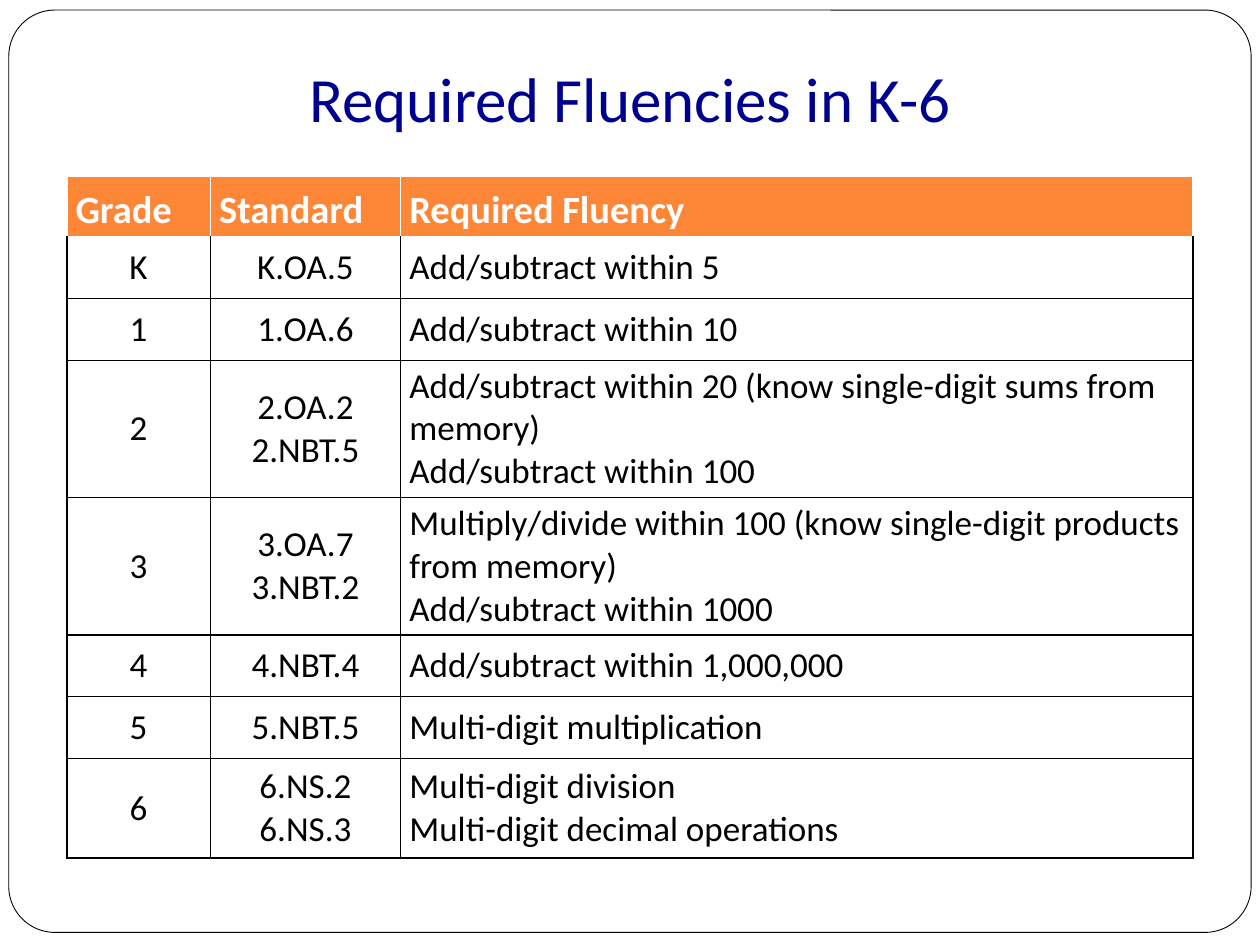
import pptx
import pptx.util
from lxml import etree
from pptx.dml.color import RGBColor
from pptx.enum.shapes import MSO_SHAPE
from pptx.enum.text import MSO_ANCHOR, PP_ALIGN
from pptx.oxml.ns import qn
from pptx.util import Inches, Pt

TITLE = "Required Fluencies in K-6"
HEADS = ["Grade", "Standard", "Required Fluency"]
# Each cell is a list of paragraphs.
GRADES = [
    (["K"], ["K.OA.5"], ["Add/subtract within 5"]),
    (["1"], ["1.OA.6"], ["Add/subtract within 10"]),
    (["2"], ["2.OA.2", "2.NBT.5"],
     ["Add/subtract within 20 (know single-digit sums from memory)",
      "Add/subtract within 100"]),
    (["3"], ["3.OA.7", "3.NBT.2"],
     ["Multiply/divide within 100 (know single-digit products from memory)",
      "Add/subtract within 1000"]),
    (["4"], ["4.NBT.4"], ["Add/subtract within 1,000,000"]),
    (["5"], ["5.NBT.5"], ["Multi-digit multiplication"]),
    (["6"], ["6.NS.2", "6.NS.3"],
     ["Multi-digit division", "Multi-digit decimal operations"]),
]
WIDTHS = [1.14, 1.51, 6.29]
HEIGHTS = [0.48, 0.49, 0.49, 1.09, 1.09, 0.49, 0.49, 0.79]
FONT = "Calibri"
BLACK, WHITE, ORANGE, NAVY = "000000", "FFFFFF", "FE8637", "000090"


def color(code):
    return RGBColor.from_string(code)


def write(par, text, size, code, bold=False):
    run = par.add_run()
    run.text = text
    run.font.name = FONT
    run.font.size = Pt(size)
    run.font.bold = bold
    run.font.color.rgb = color(code)


def border(cell, top, rest):
    props = cell._tc.get_or_add_tcPr()
    for side, code in (("L", rest), ("R", rest), ("T", top), ("B", rest)):
        line = etree.SubElement(props, qn("a:ln" + side), w=str(Pt(1)))
        fill = etree.SubElement(line, qn("a:solidFill"))
        etree.SubElement(fill, qn("a:srgbClr"), val=code)


def fill_cell(cell, lines, col, head, top):
    cell.vertical_anchor = MSO_ANCHOR.MIDDLE
    cell.margin_left = cell.margin_right = Inches(0.07)
    cell.margin_top = cell.margin_bottom = 0
    border(cell, top, WHITE if head else BLACK)
    if head:
        cell.fill.solid()
        cell.fill.fore_color.rgb = color(ORANGE)
    else:
        cell.fill.background()
    frame = cell.text_frame
    for i, text in enumerate(lines):
        par = frame.add_paragraph() if i else frame.paragraphs[0]
        if head:
            par.line_spacing = 1.15
            write(par, text, 22, WHITE, True)
        else:
            par.alignment = PP_ALIGN.CENTER if col < 2 else PP_ALIGN.LEFT
            write(par, text, 20, BLACK)


def add_frame(slide):
    frame = slide.shapes.add_shape(
        MSO_SHAPE.ROUNDED_RECTANGLE,
        Inches(0.07), Inches(0.08), Inches(9.86), Inches(7.32))
    frame.adjustments[0] = 0.05
    frame.shadow.inherit = False
    frame.fill.solid()
    frame.fill.fore_color.rgb = color(WHITE)
    frame.line.color.rgb = color(BLACK)
    frame.line.width = Pt(0.5)
    slide.shapes.title._element.addprevious(frame._element)


def add_title(slide):
    title = slide.shapes.title
    title.left, title.top = Inches(0.5), Inches(0.41)
    title.width, title.height = Inches(9), Inches(0.71)
    text = title.text_frame
    text.word_wrap = True
    text.vertical_anchor = MSO_ANCHOR.BOTTOM
    par = text.paragraphs[0]
    par.alignment = PP_ALIGN.CENTER
    write(par, TITLE, 36, NAVY)


def add_grid(slide):
    rows = [[[head] for head in HEADS]] + GRADES
    grid = slide.shapes.add_table(
        len(rows), len(HEADS), Inches(0.53), Inches(1.4),
        Inches(sum(WIDTHS)), Inches(sum(HEIGHTS))).table
    for col, width in zip(grid.columns, WIDTHS):
        col.width = Inches(width)
    for r, (row, height) in enumerate(zip(rows, HEIGHTS)):
        grid.rows[r].height = Inches(height)
        for c, lines in enumerate(row):
            fill_cell(grid.cell(r, c), lines, c, r == 0,
                      WHITE if r < 2 else BLACK)


def main():
    deck = pptx.Presentation()
    deck.slide_width, deck.slide_height = Inches(10), Inches(7.5)
    slide = deck.slides.add_slide(deck.slide_layouts[5])
    add_frame(slide)
    add_title(slide)
    add_grid(slide)
    deck.save("out.pptx")


if __name__ == "__main__":
    main()
